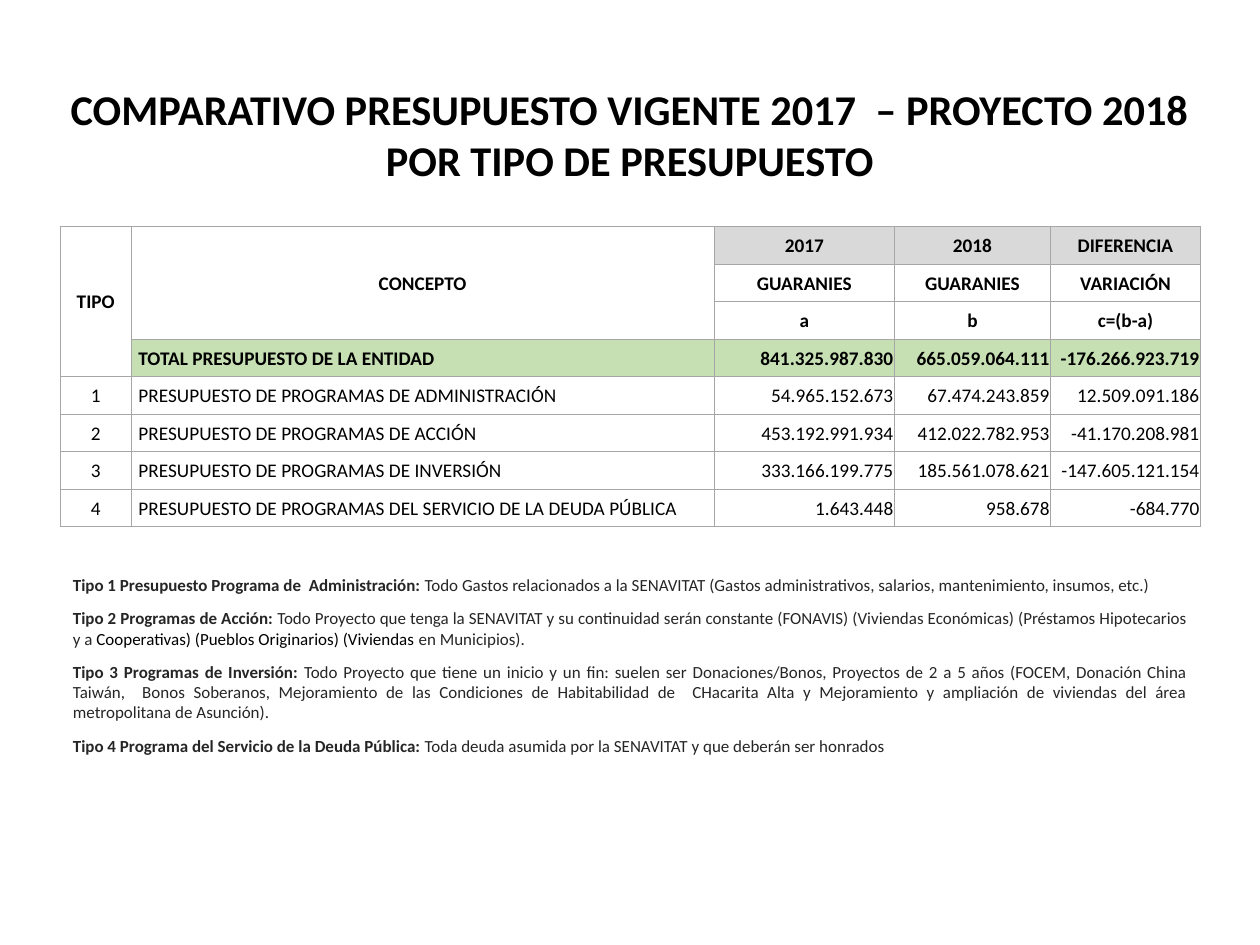
"""Build the slide comparing the 2017 budget with the 2018 project."""
import pptx
import pptx.dml.color
import pptx.enum.text
import pptx.oxml
import pptx.oxml.ns
import pptx.util

Cm = pptx.util.Cm
Pt = pptx.util.Pt
ALIGN = pptx.enum.text.PP_ALIGN
ANCHOR = pptx.enum.text.MSO_ANCHOR

COLORS = {
    "black": "000000",
    "body": "262626",
    "border": "A6A6A6",
    "year": "D9D9D9",
    "total": "C6E0B4",
}
TITLE = [
    "COMPARATIVO PRESUPUESTO VIGENTE 2017  – PROYECTO 2018",
    "POR TIPO DE PRESUPUESTO",
]
BUDGET = [
    ["TIPO", "CONCEPTO", "2017", "2018", "DIFERENCIA"],
    ["", "", "GUARANIES", "GUARANIES", "VARIACIÓN"],
    ["", "", "a", "b", "c=(b-a)"],
    ["", "TOTAL PRESUPUESTO DE LA ENTIDAD",
     "841.325.987.830", "665.059.064.111", "-176.266.923.719"],
    ["1", "PRESUPUESTO DE PROGRAMAS DE ADMINISTRACIÓN",
     "54.965.152.673", "67.474.243.859", "12.509.091.186"],
    ["2", "PRESUPUESTO DE PROGRAMAS DE ACCIÓN",
     "453.192.991.934", "412.022.782.953", "-41.170.208.981"],
    ["3", "PRESUPUESTO DE PROGRAMAS DE INVERSIÓN",
     "333.166.199.775", "185.561.078.621", "-147.605.121.154"],
    ["4", "PRESUPUESTO DE PROGRAMAS DEL SERVICIO DE LA DEUDA PÚBLICA",
     "1.643.448", "958.678", "-684.770"],
]
COLUMN_WIDTHS = [1.42, 11.76, 3.63, 3.15, 3.02]
TOTAL_ROW = 3
NOTES = [
    ("Tipo 1 Presupuesto Programa de  Administración: ",
     [("Todo Gastos relacionados a la SENAVITAT (Gastos administrativos, "
       "salarios, mantenimiento, insumos, etc.)", "body")]),
    ("Tipo 2 Programas de Acción: ",
     [("Todo Proyecto que tenga la SENAVITAT y su continuidad serán constante "
       "(FONAVIS) (Viviendas Económicas) (Préstamos Hipotecarios y a ", "body"),
      ("Cooperativas) (Pueblos Originarios) (Viviendas ", "black"),
      ("en Municipios).", "body")]),
    ("Tipo 3 Programas de Inversión: ",
     [("Todo Proyecto que tiene un inicio y un fin: suelen ser Donaciones/Bonos, "
       "Proyectos de 2 a 5 años (FOCEM, Donación China Taiwán,  Bonos Soberanos, "
       "Mejoramiento de las Condiciones de Habitabilidad de  CHacarita Alta y "
       "Mejoramiento y ampliación de viviendas del área metropolitana de "
       "Asunción).", "body")]),
    ("Tipo 4 Programa del Servicio de la Deuda Pública: ",
     [("Toda deuda asumida por la SENAVITAT y que deberán ser honrados", "body")]),
]


def write(paragraph, text, size=11, color="black", bold=False, align=ALIGN.CENTER):
    """Append a formatted run to a paragraph."""
    paragraph.alignment = align
    run = paragraph.add_run()
    run.text = text
    run.font.name = "Calibri"
    run.font.size = Pt(size)
    run.font.bold = bold
    run.font.color.rgb = pptx.dml.color.RGBColor.from_string(COLORS[color])


def paragraphs(frame, count):
    """Yield the given number of paragraphs of a text frame."""
    yield frame.paragraphs[0]
    for _ in range(count - 1):
        yield frame.add_paragraph()


def border_cell(cell):
    """Draw a thin line on the four sides of a cell."""
    properties = cell._tc.get_or_add_tcPr()
    for side in ("lnL", "lnR", "lnT", "lnB"):
        properties.append(pptx.oxml.parse_xml(
            f'<a:{side} {pptx.oxml.ns.nsdecls("a")} w="{Pt(0.5)}"><a:solidFill>'
            f'<a:srgbClr val="{COLORS["border"]}"/></a:solidFill></a:{side}>'))


def fill_cell(cell, color):
    """Give a cell a named colour, or none."""
    if color is None:
        cell.fill.background()
    else:
        cell.fill.solid()
        cell.fill.fore_color.rgb = pptx.dml.color.RGBColor.from_string(COLORS[color])


def place_title(slide, left, top, width, height):
    """Move and format the title placeholder."""
    title = slide.shapes.title
    title.left, title.top, title.width, title.height = map(Cm, (left, top, width, height))
    frame = title.text_frame
    frame.auto_size = pptx.enum.text.MSO_AUTO_SIZE.NONE
    frame.word_wrap = True
    frame.vertical_anchor = ANCHOR.TOP
    for paragraph, line in zip(paragraphs(frame, len(TITLE)), TITLE):
        write(paragraph, line, size=24.2, bold=True)


def place_budget(slide, left, top, width, height):
    """Add the budget table with its merged headings."""
    budget = slide.shapes.add_table(
        len(BUDGET), len(COLUMN_WIDTHS), Cm(left), Cm(top), Cm(width), Cm(height)).table
    budget.first_row = budget.horz_banding = False
    for column, share in zip(budget.columns, COLUMN_WIDTHS):
        column.width = Cm(width * share / sum(COLUMN_WIDTHS))
    for row in budget.rows:
        row.height = Cm(height / len(BUDGET))
    for r, entries in enumerate(BUDGET):
        for c, entry in enumerate(entries):
            cell = budget.cell(r, c)
            is_concept = c == 1 and r >= TOTAL_ROW
            cell.margin_left = Cm(0.15 if is_concept else 0.02)
            cell.margin_right = cell.margin_top = Cm(0.02)
            cell.margin_bottom = 0
            cell.vertical_anchor = ANCHOR.MIDDLE
            border_cell(cell)
            if r == TOTAL_ROW and c > 0:
                fill_cell(cell, "total")
            else:
                fill_cell(cell, "year" if r == 0 and c > 1 else None)
            if entry:
                if r < TOTAL_ROW or c == 0:
                    align = ALIGN.CENTER
                else:
                    align = ALIGN.LEFT if is_concept else ALIGN.RIGHT
                write(cell.text_frame.paragraphs[0], entry,
                      bold=r <= TOTAL_ROW, align=align)
    budget.cell(0, 0).merge(budget.cell(TOTAL_ROW, 0))
    budget.cell(0, 1).merge(budget.cell(TOTAL_ROW - 1, 1))


def place_notes(slide, left, top, width, height):
    """Add the explanation of each budget type."""
    frame = slide.shapes.add_textbox(
        Cm(left), Cm(top), Cm(width), Cm(height)).text_frame
    frame.word_wrap = True
    for paragraph, (heading, parts) in zip(paragraphs(frame, len(NOTES)), NOTES):
        paragraph.space_after = Pt(7.3)
        write(paragraph, heading, size=9.7, color="body", bold=True, align=ALIGN.JUSTIFY)
        for text, color in parts:
            write(paragraph, text, size=9.7, color=color, align=ALIGN.JUSTIFY)


def main():
    """Build and save the presentation."""
    deck = pptx.Presentation()
    deck.slide_width, deck.slide_height = Cm(25.4), Cm(19.05)
    slide = deck.slides.add_slide(deck.slide_layouts[5])
    place_title(slide, 0, 1.55, 25.4, 2.31)
    place_budget(slide, 1.22, 4.57, 22.98, 6.05)
    place_notes(slide, 1.22, 11.46, 22.98, 3.91)
    deck.save("out.pptx")


if __name__ == "__main__":
    main()
